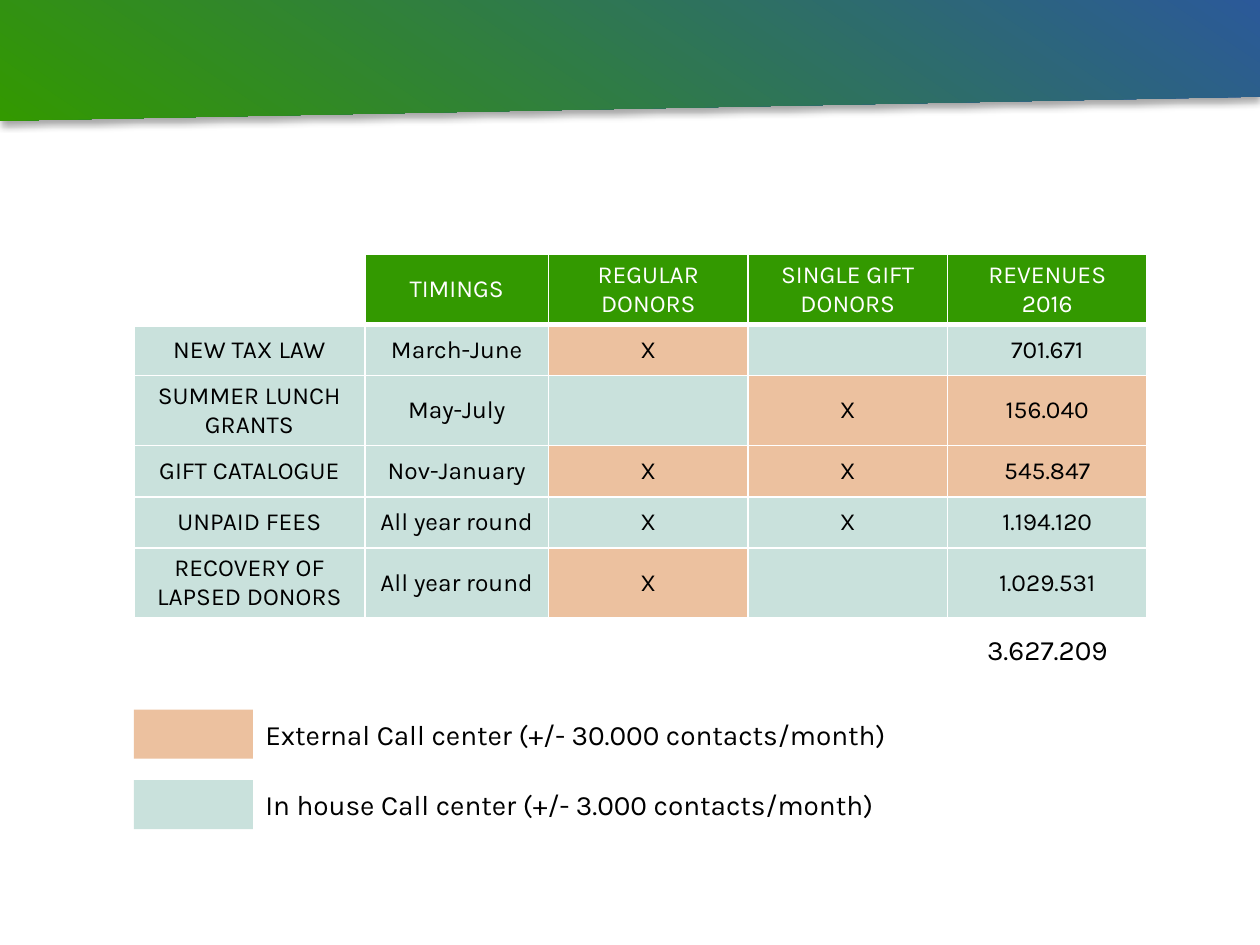
from lxml.etree import SubElement
from pptx import Presentation
from pptx.dml.color import RGBColor
from pptx.enum.shapes import MSO_SHAPE as Shape
from pptx.enum.text import MSO_ANCHOR as Anchor, PP_ALIGN as Align
from pptx.oxml.ns import qn
from pptx.util import Pt

COLORS = {
    "green": "339900", "blue": "2B5999", "white": "FFFFFF", "black": "000000",
    "external": "ECC19F", "in_house": "C9E1DC",
}
FONT = "Karla"
HEADERS = ["", "TIMINGS", "REGULAR DONORS", "SINGLE GIFT DONORS", "REVENUES 2016"]
# Campaign cells, then the columns handled by the external call center
CAMPAIGNS = [
    (["NEW TAX LAW", "March-June", "X", "", "701.671"], {2}),
    (["SUMMER LUNCH GRANTS", "May-July", "", "X", "156.040"], {3, 4}),
    (["GIFT CATALOGUE", "Nov-January", "X", "X", "545.847"], {2, 3, 4}),
    (["UNPAID FEES", "All year round", "X", "X", "1.194.120"], set()),
    (["RECOVERY OF LAPSED DONORS", "All year round", "X", "", "1.029.531"], {2}),
]
TOTAL = "3.627.209"
LEGEND = [
    ("external", "External Call center (+/- 30.000 contacts/month)"),
    ("in_house", "In house Call center (+/- 3.000 contacts/month)"),
]

PAGE_WIDTH, PAGE_HEIGHT = 720, 540
LEFT, TABLE_TOP = 76.5, 145.5
COLUMN_WIDTHS = [132, 105, 114, 114, 114]
ROW_HEIGHTS = [40, 29.2, 40, 29.2, 29.2, 40]
LEGEND_TOP, LEGEND_STEP = 405.5, 40.3
SWATCH_WIDTH, SWATCH_HEIGHT = 68, 28


def rgb(name):
    return RGBColor.from_string(COLORS[name])


def write(frame, text, size, color, align):
    para = frame.paragraphs[0]
    para.alignment = align
    span = para.add_run()
    span.text = text
    span.font.size = Pt(size)
    span.font.name = FONT
    span.font.color.rgb = rgb(color)


def add_text(page, text, left, top, width, align):
    box = page.shapes.add_textbox(Pt(left), Pt(top), Pt(width), Pt(26.5))
    box.text_frame.word_wrap = True
    write(box.text_frame, text, 16, "black", align)


def add_color(parent, name):
    return SubElement(parent, qn("a:srgbClr"), val=COLORS[name])


def add_borders(cell, widths):
    """Draw white borders; widths maps the sides L, R, T, B to points."""
    properties = cell._tc.get_or_add_tcPr()
    for side, width in widths.items():
        line = SubElement(properties, qn(f"a:ln{side}"), w=str(Pt(width)))
        add_color(SubElement(line, qn("a:solidFill")), "white")


def add_band(page):
    band = page.shapes.add_shape(Shape.FLOWCHART_MANUAL_INPUT, 0, 0, Pt(PAGE_WIDTH), Pt(69))
    band.rotation = 180
    band.line.fill.background()
    band.fill.gradient()
    band.fill.gradient_angle = 56
    for stop, name in zip(band.fill.gradient_stops, ("blue", "green")):
        stop.color.rgb = rgb(name)
    band.shadow.inherit = False
    effects = band._element.spPr.find(qn("a:effectLst"))
    shadow = SubElement(effects, qn("a:outerShdw"), blurRad=str(Pt(4)), dist=str(Pt(3)),
                        dir="5400000", rotWithShape="0")
    SubElement(add_color(shadow, "black"), qn("a:alpha"), val="35000")


def add_campaign_table(page):
    rows = [(HEADERS, set())] + CAMPAIGNS
    table = page.shapes.add_table(
        len(rows), len(HEADERS), Pt(LEFT), Pt(TABLE_TOP),
        Pt(sum(COLUMN_WIDTHS)), Pt(sum(ROW_HEIGHTS))).table
    table.first_row = table.horz_banding = False
    for column, width in zip(table.columns, COLUMN_WIDTHS):
        column.width = Pt(width)
    for r, (texts, external) in enumerate(rows):
        table.rows[r].height = Pt(ROW_HEIGHTS[r])
        for c, text in enumerate(texts):
            cell = table.cell(r, c)
            cell.vertical_anchor = Anchor.MIDDLE
            add_borders(cell, {"L": 1, "R": 1, "T": 3 if r == 1 else 1, "B": 3 if r == 0 else 1})
            if r == 0 and not text:
                cell.fill.background()
                continue
            fill = "green" if r == 0 else "external" if c in external else "in_house"
            cell.fill.solid()
            cell.fill.fore_color.rgb = rgb(fill)
            if text:
                write(cell.text_frame, text, 14, "black" if r else "white", Align.CENTER)


def add_legend(page):
    for i, (color, text) in enumerate(LEGEND):
        top = LEGEND_TOP + i * LEGEND_STEP
        swatch = page.shapes.add_shape(
            Shape.RECTANGLE, Pt(LEFT), Pt(top), Pt(SWATCH_WIDTH), Pt(SWATCH_HEIGHT))
        swatch.shadow.inherit = False
        swatch.fill.solid()
        swatch.fill.fore_color.rgb = rgb(color)
        swatch.line.fill.background()
        add_text(page, text, LEFT + SWATCH_WIDTH, top + 0.7, 420, Align.LEFT)


def main():
    deck = Presentation()
    deck.slide_width, deck.slide_height = Pt(PAGE_WIDTH), Pt(PAGE_HEIGHT)
    page = deck.slides.add_slide(deck.slide_layouts[6])
    add_band(page)
    add_campaign_table(page)
    total_left = LEFT + sum(COLUMN_WIDTHS[:-1])
    add_text(page, TOTAL, total_left, 358, COLUMN_WIDTHS[-1], Align.CENTER)
    add_legend(page)
    deck.save("out.pptx")


if __name__ == "__main__":
    main()
